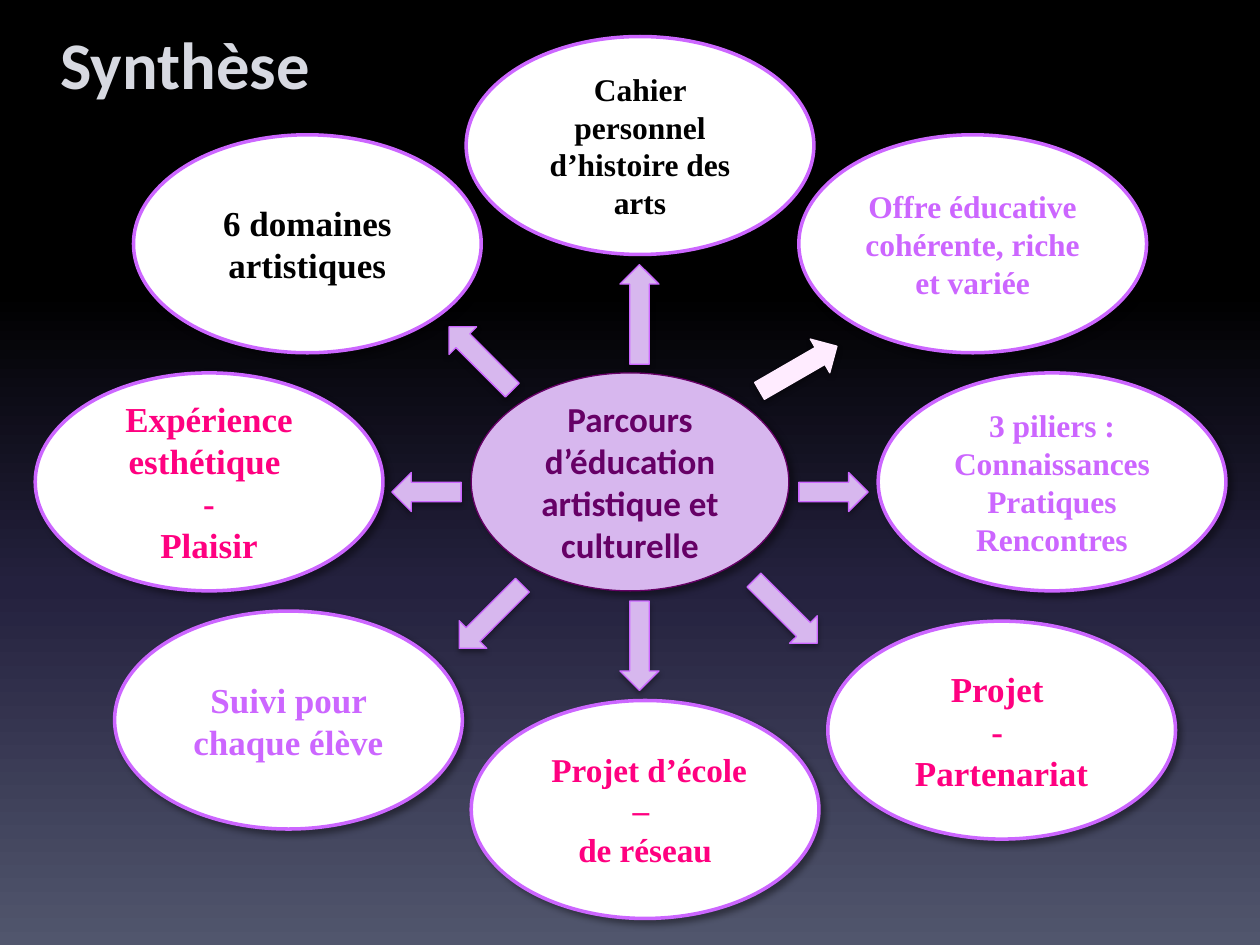
from lxml import etree
from pptx import Presentation
from pptx.dml.color import RGBColor
from pptx.enum.shapes import MSO_SHAPE
from pptx.enum.text import MSO_ANCHOR, PP_ALIGN
from pptx.oxml import parse_xml
from pptx.oxml.ns import nsdecls, qn
from pptx.util import Inches, Pt

ELLIPSE = MSO_SHAPE.OVAL
UP, DOWN = MSO_SHAPE.UP_ARROW, MSO_SHAPE.DOWN_ARROW
LEFT, RIGHT = MSO_SHAPE.LEFT_ARROW, MSO_SHAPE.RIGHT_ARROW
CENTER = PP_ALIGN.CENTER
MIDDLE, TOP = MSO_ANCHOR.MIDDLE, MSO_ANCHOR.TOP

SERIF, SANS = "Times New Roman", "Calibri"
BLACK, WHITE = "000000", "FFFFFF"
LILAC, VIOLET, PLUM = "D7B7EE", "CC66FF", "660066"
PINK, PALE, SILVER = "FF0080", "FFECFF", "D7D9E1"

# Shadow: opacity %, blur pt, distance pt, direction in degrees
BUBBLE_SHADOW = (40, 4, 3, 45)
ARROW_SHADOW = (35, 3.1, 1.8, 90)

BACKDROP = [(0, BLACK), (31, BLACK), (62, "24213E"), (100, "51566D")]
HUB_SIZE, BUBBLE_SIZE = (2.52, 1.73), (2.76, 1.73)
ARROW_WIDTH = 0.31

# Left, top, size, colour, paragraphs
BUBBLES = [
    (1.06, 1.07, 20, BLACK, ["6 domaines artistiques"]),
    (3.74, 5.56, 19, PINK, [" Projet d’école – ", "de réseau"]),
    (6.97, 2.96, 18, VIOLET,
     ["3 piliers : Connaissances", "Pratiques", "Rencontres"]),
    (0.91, 4.85, 20, VIOLET, ["Suivi pour chaque élève"]),
    (6.34, 1.07, 18, VIOLET, ["Offre éducative cohérente, riche et variée"]),
    (3.70, 0.29, 18, BLACK, ["Cahier personnel d’histoire des arts"]),
    (0.28, 2.96, 20, PINK, ["Expérience esthétique ", "-", "Plaisir"]),
    (6.57, 4.93, 20, PINK, ["Projet ", "- ", "Partenariat"]),
]

# Kind, left, top, length, rotation, fill, line
ARROWS = [
    (UP, 4.92, 2.10, 0.79, 0, LILAC, VIOLET),
    (RIGHT, 6.34, 3.75, 0.55, 0, LILAC, VIOLET),
    (LEFT, 3.11, 3.75, 0.55, 0, LILAC, VIOLET),
    (DOWN, 4.92, 4.77, 0.71, 0, LILAC, VIOLET),
    (DOWN, 6.18, 2.57, 0.71, 240, PALE, PALE),
    (DOWN, 6.08, 4.50, 0.71, 315, LILAC, VIOLET),
    (UP, 3.66, 2.49, 0.71, 315, LILAC, VIOLET),
    (DOWN, 3.74, 4.54, 0.71, 45, LILAC, VIOLET),
]


def color(value):
    return RGBColor.from_string(value)


def add_shadow(shape, settings):
    opacity, blur, distance, angle = settings
    shape.shadow.inherit = False
    effects = shape._element.spPr.find(qn("a:effectLst"))
    shadow = etree.SubElement(
        effects, qn("a:outerShdw"), blurRad=str(Pt(blur)),
        dist=str(Pt(distance)), dir=str(angle * 60000), rotWithShape="0")
    tint = etree.SubElement(shadow, qn("a:srgbClr"), val=BLACK)
    etree.SubElement(tint, qn("a:alpha"), val=str(opacity * 1000))


def add_figure(page, kind, box, fill, line, weight, shadow):
    shape = page.shapes.add_shape(kind, *map(Inches, box))
    shape.fill.solid()
    shape.fill.fore_color.rgb = color(fill)
    shape.line.color.rgb = color(line)
    shape.line.width = Pt(weight)
    add_shadow(shape, shadow)
    return shape


def write(shape, lines, font, size, ink, anchor=MIDDLE):
    frame = shape.text_frame
    frame.word_wrap = True
    frame.vertical_anchor = anchor
    for index, line in enumerate(lines):
        para = frame.add_paragraph() if index else frame.paragraphs[0]
        para.alignment = CENTER
        span = para.add_run()
        span.text = line
        span.font.name = font
        span.font.size = Pt(size)
        span.font.bold = True
        span.font.color.rgb = color(ink)


def paint_background(page):
    stops = "".join(
        f'<a:gs pos="{place * 1000}"><a:srgbClr val="{tint}"/></a:gs>'
        for place, tint in BACKDROP)
    background = parse_xml(
        f'<p:bg {nsdecls("p", "a")}><p:bgPr><a:gradFill rotWithShape="1">'
        f'<a:gsLst>{stops}</a:gsLst><a:lin ang="5400000" scaled="0"/>'
        f'</a:gradFill><a:effectLst/></p:bgPr></p:bg>')
    page._element.cSld.insert(0, background)


def add_title(page, box):
    title = page.shapes.add_textbox(*map(Inches, box))
    write(title, ["Synthèse "], SANS, 38, SILVER, TOP)


def add_hub(page, box):
    hub = add_figure(page, ELLIPSE, box, LILAC, PLUM, 0.75, BUBBLE_SHADOW)
    write(hub, ["Parcours d’éducation artistique et culturelle"],
          SANS, 20, PLUM)


def add_bubble(page, box, size, ink, lines):
    bubble = add_figure(page, ELLIPSE, box, WHITE, VIOLET, 2, BUBBLE_SHADOW)
    write(bubble, lines, SERIF, size, ink)


def add_arrow(page, kind, box, rotation, fill, line):
    arrow = add_figure(page, kind, box, fill, line, 0.75, ARROW_SHADOW)
    arrow.rotation = rotation


def main():
    deck = Presentation()
    deck.slide_width, deck.slide_height = Inches(10), Inches(7.5)
    page = deck.slides.add_slide(deck.slide_layouts[6])
    paint_background(page)

    # Central idea and the ideas around it
    add_hub(page, (3.74, 2.96, *HUB_SIZE))
    for left, top, size, ink, lines in BUBBLES:
        add_bubble(page, (left, top, *BUBBLE_SIZE), size, ink, lines)

    # Arrows pointing outwards
    for kind, left, top, length, rotation, fill, line in ARROWS:
        extent = (ARROW_WIDTH, length)
        if kind in (LEFT, RIGHT):
            extent = (length, ARROW_WIDTH)
        add_arrow(page, kind, (left, top, *extent), rotation, fill, line)

    add_title(page, (0.03, 0.13, 3, 0.74))
    deck.save("out.pptx")


if __name__ == "__main__":
    main()
